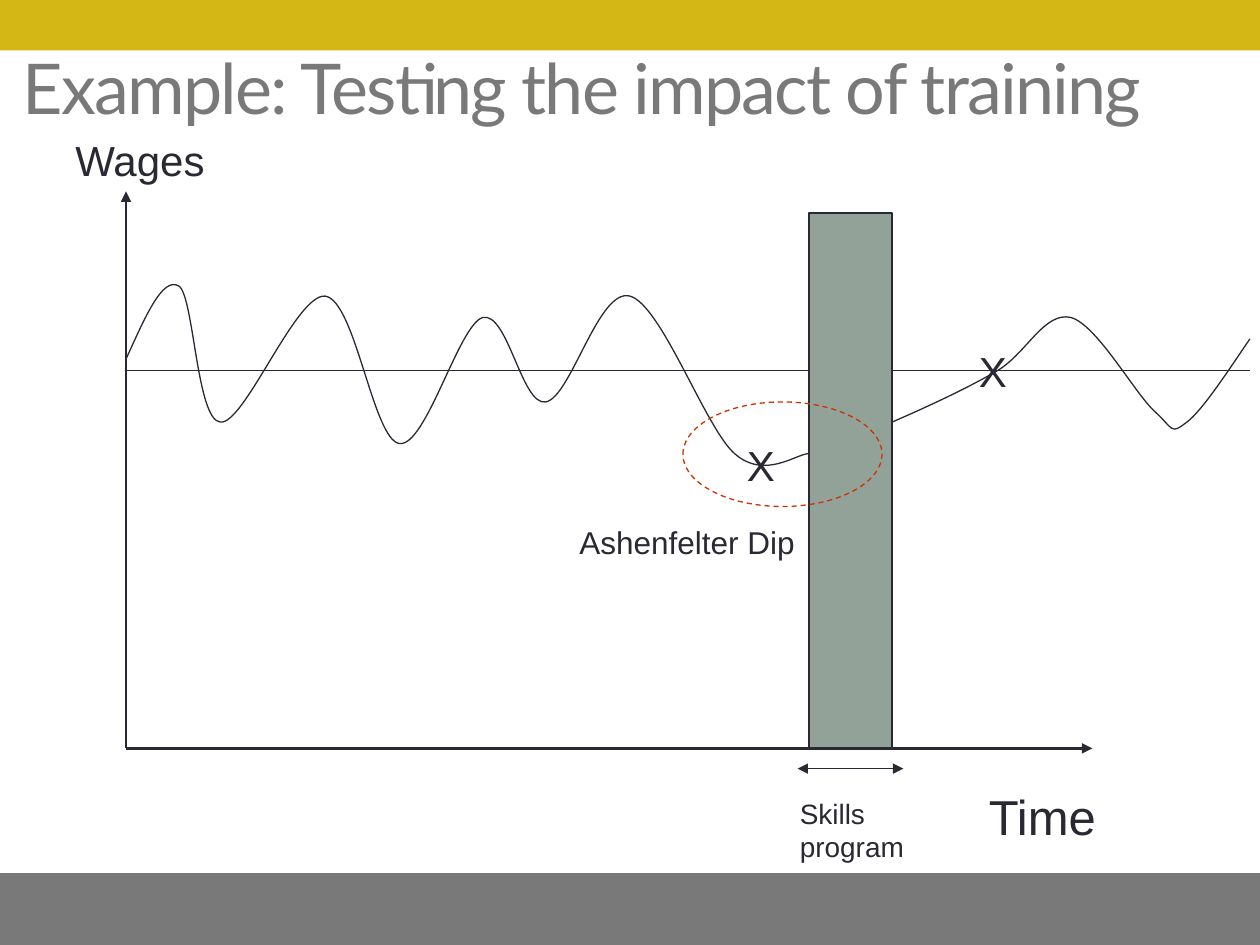
from dataclasses import dataclass
from typing import Optional

from lxml.etree import SubElement
from pptx import Presentation
from pptx.dml.color import RGBColor
from pptx.enum.dml import MSO_LINE_DASH_STYLE as Dash
from pptx.enum.shapes import MSO_CONNECTOR as Conn, MSO_SHAPE as Shape
from pptx.enum.text import MSO_ANCHOR as Anchor, MSO_AUTO_SIZE as AutoSize, PP_ALIGN as Align
from pptx.oxml.ns import qn
from pptx.util import Inches, Pt

COLS, ROWS = 100, 75
INK, GREY, GOLD, SAGE, RED = "292934", "787978", "D4B715", "93A299", "CC3300"
AXIS_X, AXIS_Y, MEAN_Y = 10, 59.4, 29.4
START, END, RIGHT = 64.2, 70.8, 99.2

prs = Presentation()
prs.slide_width, prs.slide_height = Inches(10), Inches(7.5)


@dataclass
class Block:
    """A preset shape placed on the grid."""
    kind: Shape
    x: float
    y: float
    w: float
    h: float
    fill: Optional[str] = None
    line: Optional[str] = None
    dash: Optional[Dash] = None


@dataclass
class Label:
    """A text box placed on the grid."""
    text: str
    x: float
    y: float
    w: float
    h: float
    size: float


@dataclass
class Line:
    """A straight line with optional arrowheads."""
    x1: float
    y1: float
    x2: float
    y2: float
    width: float = 0.75
    head: bool = False
    tail: bool = False


BARS = [
    Block(Shape.RECTANGLE, 0, 0, COLS, 4, GOLD),
    Block(Shape.RECTANGLE, 0, 69.3, COLS, ROWS - 69.3, GREY),
]
PROGRAM = Block(Shape.RECTANGLE, START, 16.9, END - START, AXIS_Y - 16.9, SAGE, INK)
DIP = Block(Shape.OVAL, 54.2, 31.9, 15.8, 8.3, None, RED, Dash.DASH)
LINES = [
    Line(AXIS_X, AXIS_Y, 86.7, AXIS_Y, 1.5, tail=True),
    Line(AXIS_X, AXIS_Y, AXIS_X, 15.2, 1.5, tail=True),
    Line(63.3, 61, 71.7, 61, head=True, tail=True),
    Line(AXIS_X, MEAN_Y, START, MEAN_Y),
    Line(END, MEAN_Y, RIGHT, MEAN_Y),
]
LABELS = [
    Label("Time", 77.5, 61.9, 12.5, 5.7, 28),
    Label("Wages", 5, 10.2, 13.3, 5, 24),
    Label("Skills program", 62.5, 62.7, 13.3, 6.4, 16),
    Label("X", 76.7, 26.9, 6.7, 5, 24),
    Label("X", 58.3, 34.4, 5, 5, 24),
    Label("Ashenfelter Dip", 45, 41, 25, 4, 18),
]
WAGES_BEFORE = [
    (AXIS_X, 28.5),
    (11.5, 25.2), (12.9, 21.9), (14.2, 22.7), (15.4, 23.5), (15.6, 33.4), (17.5, 33.5),
    (19.4, 33.7), (23.5, 23.3), (25.8, 23.5), (28.2, 23.8), (29.6, 34.9), (31.7, 35.2),
    (33.8, 35.5), (36.4, 25.8), (38.3, 25.2), (40.3, 24.7), (41.4, 32.2), (43.3, 31.9),
    (45.3, 31.6), (47.5, 22.8), (50, 23.5), (52.5, 24.2), (56, 34), (58.3, 36),
    (60.7, 38.1), (63.2, 36), (START, 36),
]
WAGES_AFTER = [
    (END, 33.5),
    (73.8, 32.2), (76.8, 30.8), (79.2, 29.4), (81.5, 28), (82.9, 24.7), (85, 25.2),
    (87.1, 25.8), (90.1, 31.3), (91.7, 32.7), (93.2, 34.1), (92.9, 34.5), (94.2, 33.5),
    (95.4, 32.6), (97.3, 29.7), (RIGHT, 26.9),
]


def rgb(value: str) -> RGBColor:
    """Turn a hex string into a colour."""
    return RGBColor.from_string(value)


def gx(col: float) -> int:
    """Convert grid columns to a length."""
    return round(prs.slide_width * col / COLS)


def gy(row: float) -> int:
    """Convert grid rows to a length."""
    return round(prs.slide_height * row / ROWS)


def place(b) -> tuple:
    """Return the left, top, width and height of a grid item."""
    return gx(b.x), gy(b.y), gx(b.w), gy(b.h)


def style_run(r, font: str, size: float, color: str) -> None:
    """Set the font, size and colour of a run."""
    r.font.name, r.font.size = font, Pt(size)
    r.font.color.rgb = rgb(color)


def draw_block(s, b: Block) -> None:
    """Draw a preset shape."""
    sp = s.shapes.add_shape(b.kind, *place(b))
    sp.shadow.inherit = False
    if b.fill:
        sp.fill.solid()
        sp.fill.fore_color.rgb = rgb(b.fill)
    else:
        sp.fill.background()
    if b.line:
        sp.line.color.rgb, sp.line.width = rgb(b.line), Pt(0.75)
        if b.dash:
            sp.line.dash_style = b.dash
    else:
        sp.line.fill.background()


def draw_line(s, ln: Line) -> None:
    """Draw a line and its arrowheads."""
    c = s.shapes.add_connector(Conn.STRAIGHT, gx(ln.x1), gy(ln.y1), gx(ln.x2), gy(ln.y2))
    c.line.color.rgb, c.line.width = rgb(INK), Pt(ln.width)
    for tag, wanted in (("a:headEnd", ln.head), ("a:tailEnd", ln.tail)):
        if wanted:
            SubElement(c.line._get_or_add_ln(), qn(tag), type="triangle")
    SubElement(c._element.spPr, qn("a:effectLst"))


def draw_curve(s, points: list) -> None:
    """Draw a chain of cubic curves through a start point and point triples."""
    start, *rest = [(gx(x), gy(y)) for x, y in points]
    fb = s.shapes.build_freeform(*start)
    fb.add_line_segments(rest, close=False)
    sp = fb.convert_to_shape()
    sp.shadow.inherit = False
    sp.fill.background()
    sp.line.color.rgb, sp.line.width = rgb(INK), Pt(0.75)
    path = sp._element.find(".//" + qn("a:path"))
    segments = path.findall(qn("a:lnTo"))
    for i in range(0, len(segments), 3):
        curve = SubElement(path, qn("a:cubicBezTo"))
        for seg in segments[i:i + 3]:
            curve.append(seg[0])
            path.remove(seg)


def draw_label(s, lb: Label) -> None:
    """Draw a text box."""
    tf = s.shapes.add_textbox(*place(lb)).text_frame
    tf.word_wrap, tf.auto_size = True, AutoSize.SHAPE_TO_FIT_TEXT
    tf.text = lb.text
    style_run(tf.paragraphs[0].runs[0], "Arial", lb.size, INK)


def draw_title(s, text: str) -> None:
    """Fill and format the title placeholder."""
    sp = s.shapes.title
    sp.left, sp.top, sp.width, sp.height = gx(0.8), gy(3), gx(97.5), gy(7.8)
    tf = sp.text_frame
    tf.text, tf.vertical_anchor = text, Anchor.MIDDLE
    tf.word_wrap, tf.auto_size = True, AutoSize.NONE
    p = tf.paragraphs[0]
    p.alignment = Align.LEFT
    r = p.runs[0]
    style_run(r, "Lato", 40, GREY)
    r.font._element.set("spc", "-100")


def main() -> None:
    """Build the slide and save it."""
    s = prs.slides.add_slide(prs.slide_layouts[5])
    draw_title(s, "Example: Testing the impact of training")
    for b in [*BARS, PROGRAM]:
        draw_block(s, b)
    for ln in LINES:
        draw_line(s, ln)
    for points in (WAGES_BEFORE, WAGES_AFTER):
        draw_curve(s, points)
    draw_block(s, DIP)
    for lb in LABELS:
        draw_label(s, lb)
    prs.save("out.pptx")


if __name__ == "__main__":
    main()
